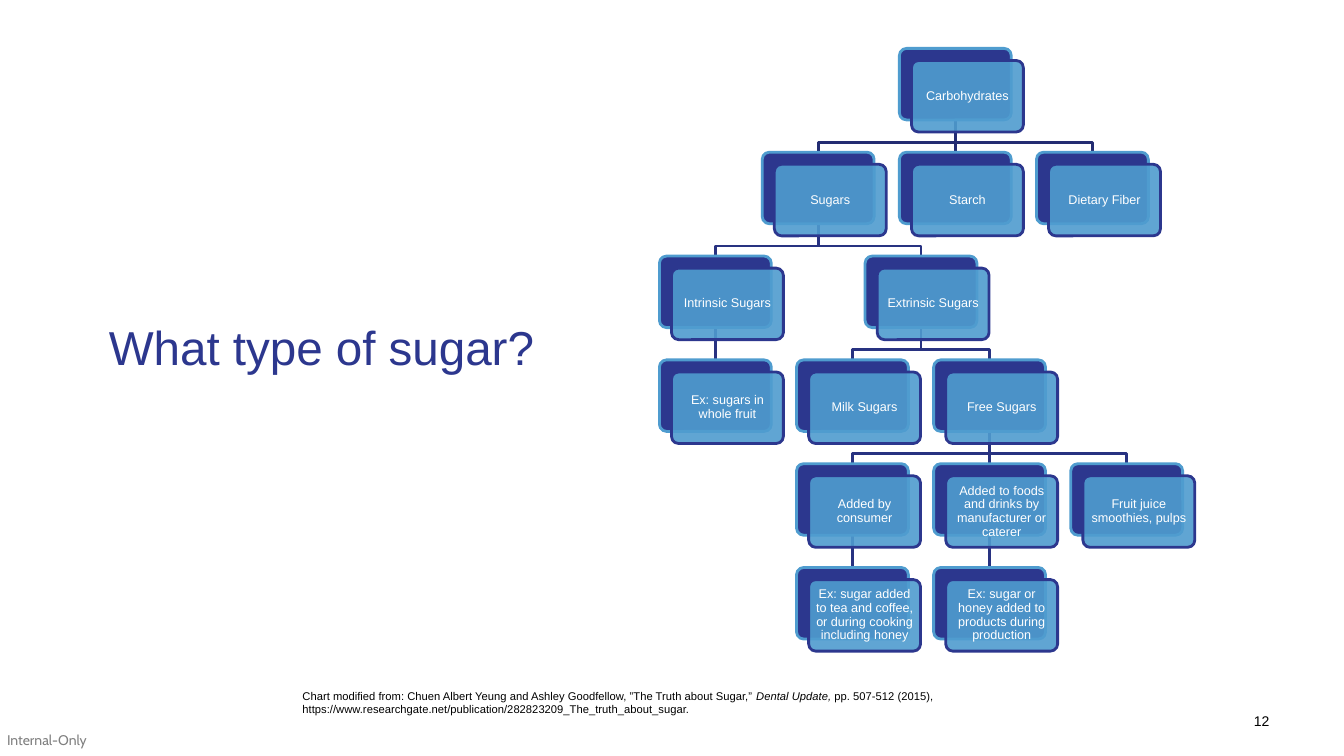
from pptx import Presentation
from pptx.dml.color import RGBColor
from pptx.enum.shapes import MSO_CONNECTOR, MSO_SHAPE
from pptx.enum.text import MSO_ANCHOR, PP_ALIGN
from pptx.oxml.ns import qn
from pptx.util import Inches, Pt
from lxml import etree

ROUND = MSO_SHAPE.ROUNDED_RECTANGLE
STRAIGHT = MSO_CONNECTOR.STRAIGHT
TOP, MIDDLE, BOTTOM = MSO_ANCHOR.TOP, MSO_ANCHOR.MIDDLE, MSO_ANCHOR.BOTTOM
LEFT, CENTER, RIGHT = PP_ALIGN.LEFT, PP_ALIGN.CENTER, PP_ALIGN.RIGHT

NAVY = RGBColor(0x2C, 0x37, 0x8E)
SKY = RGBColor(0x4F, 0x9C, 0xCF)
TOP_LINK = RGBColor(0x23, 0x2C, 0x72)
LINK = RGBColor(0x28, 0x32, 0x81)
WHITE = RGBColor(0xFF, 0xFF, 0xFF)
BLACK = RGBColor(0, 0, 0)
GRAY = RGBColor(0x80, 0x80, 0x80)

TITLE = "What type of sugar?"
CITATION = [
    ("Chart modified from: Chuen Albert Yeung and Ashley Goodfellow, ”The Truth about Sugar,” ", False),
    ("Dental Update, ", True),
    ("pp. 507-512 (2015), https://www.researchgate.net/publication/282823209_The_truth_about_sugar.", False),
]
PAGE = "12"
LABEL = "Internal-Only"

# text, column, row, index of parent
NODES = [
    ("Carbohydrates", 1.75, 0, None),
    ("Sugars", 0.75, 1, 0),
    ("Starch", 1.75, 1, 0),
    ("Dietary Fiber", 2.75, 1, 0),
    ("Intrinsic Sugars", 0, 2, 1),
    ("Extrinsic Sugars", 1.5, 2, 1),
    ("Ex: sugars in whole fruit", 0, 3, 4),
    ("Milk Sugars", 1, 3, 5),
    ("Free Sugars", 2, 3, 5),
    ("Added by consumer", 1, 4, 8),
    ("Added to foods and drinks by manufacturer or caterer", 2, 4, 8),
    ("Fruit juice smoothies, pulps", 3, 4, 8),
    ("Ex: sugar added to tea and coffee, or during cooking including honey", 1, 5, 9),
    ("Ex: sugar or honey added to products during production", 2, 5, 10),
]
TREE_X, TREE_Y = 6.54, 0.48
STEP_X, STEP_Y = 1.36, 1.03
BOX_W, BOX_H = 1.11, 0.71
OFFSET = 0.12
BEND = 0.22


def write(tf, runs, size, color, font="Arial", align=LEFT, anchor=TOP, inset=0, spacing=1.0):
    tf.word_wrap = True
    tf.vertical_anchor = anchor
    tf.margin_left = tf.margin_right = tf.margin_top = tf.margin_bottom = Inches(inset)
    p = tf.paragraphs[0]
    p.alignment = align
    p.line_spacing = spacing
    for text, italic in runs:
        r = p.add_run()
        r.text = text
        r.font.name = font
        r.font.size = Pt(size)
        r.font.italic = italic
        r.font.color.rgb = color


def text_box(s, at, runs, size, color, **fmt):
    sp = s.shapes.add_textbox(*map(Inches, at))
    write(sp.text_frame, runs, size, color, **fmt)


def node_at(node):
    return TREE_X + node[1] * STEP_X, TREE_Y + node[2] * STEP_Y


def add_link(s, parent, child):
    (px, py), (cx, cy) = node_at(parent), node_at(child)
    x1, x2 = Inches(px + BOX_W / 2), Inches(cx + BOX_W / 2)
    y1, y2 = Inches(py + BOX_H), Inches(cy)
    if parent[1] == child[1]:
        sp = s.shapes.add_connector(STRAIGHT, x1, y1, x2, y2)
        etree.SubElement(sp.line._get_or_add_ln().getparent(), qn("a:effectLst"))
    else:
        bend = y1 + Inches(BEND)
        fb = s.shapes.build_freeform(x1, y1)
        fb.add_line_segments([(x1, bend), (x2, bend), (x2, y2)], close=False)
        sp = fb.convert_to_shape()
        sp.fill.background()
        sp.shadow.inherit = False
    sp.line.color.rgb = LINK if parent[2] else TOP_LINK
    sp.line.width = Pt(2)


def add_card(s, x, y, fill, line):
    sp = s.shapes.add_shape(ROUND, Inches(x), Inches(y), Inches(BOX_W), Inches(BOX_H))
    sp.adjustments[0] = 0.1
    sp.shadow.inherit = False
    sp.fill.solid()
    sp.fill.fore_color.rgb = fill
    sp.line.color.rgb = line
    sp.line.width = Pt(2)
    return sp


def add_node(s, node):
    x, y = node_at(node)
    add_card(s, x, y, NAVY, SKY)
    sp = add_card(s, x + OFFSET, y + OFFSET, SKY, NAVY)
    color = sp._element.spPr.find(qn("a:solidFill"))[0]
    etree.SubElement(color, qn("a:alpha"), val="90000")
    write(sp.text_frame, [(node[0], False)], 9, WHITE,
          align=CENTER, anchor=MIDDLE, inset=0.04, spacing=0.9)


def main():
    prs = Presentation()
    prs.slide_width, prs.slide_height = Inches(13.33), Inches(7.5)
    s = prs.slides.add_slide(prs.slide_layouts[6])
    text_box(s, (12.01, 7.07, 0.58, 0.17), [(PAGE, False)], 10, BLACK, align=RIGHT)
    text_box(s, (0.07, 7.26, 0.82, 0.17), [(LABEL, False)], 10, GRAY, font="Cabin")
    text_box(s, (1.08, 3.22, 4.83, 1.06), [(TITLE, False)], 34, NAVY, spacing=0.9)
    text_box(s, (3, 6.84, 8.81, 0.26), CITATION, 8, BLACK, anchor=BOTTOM)
    for node in NODES:
        if node[3] is not None:
            add_link(s, NODES[node[3]], node)
    for node in NODES:
        add_node(s, node)
    prs.save("out.pptx")


if __name__ == "__main__":
    main()
